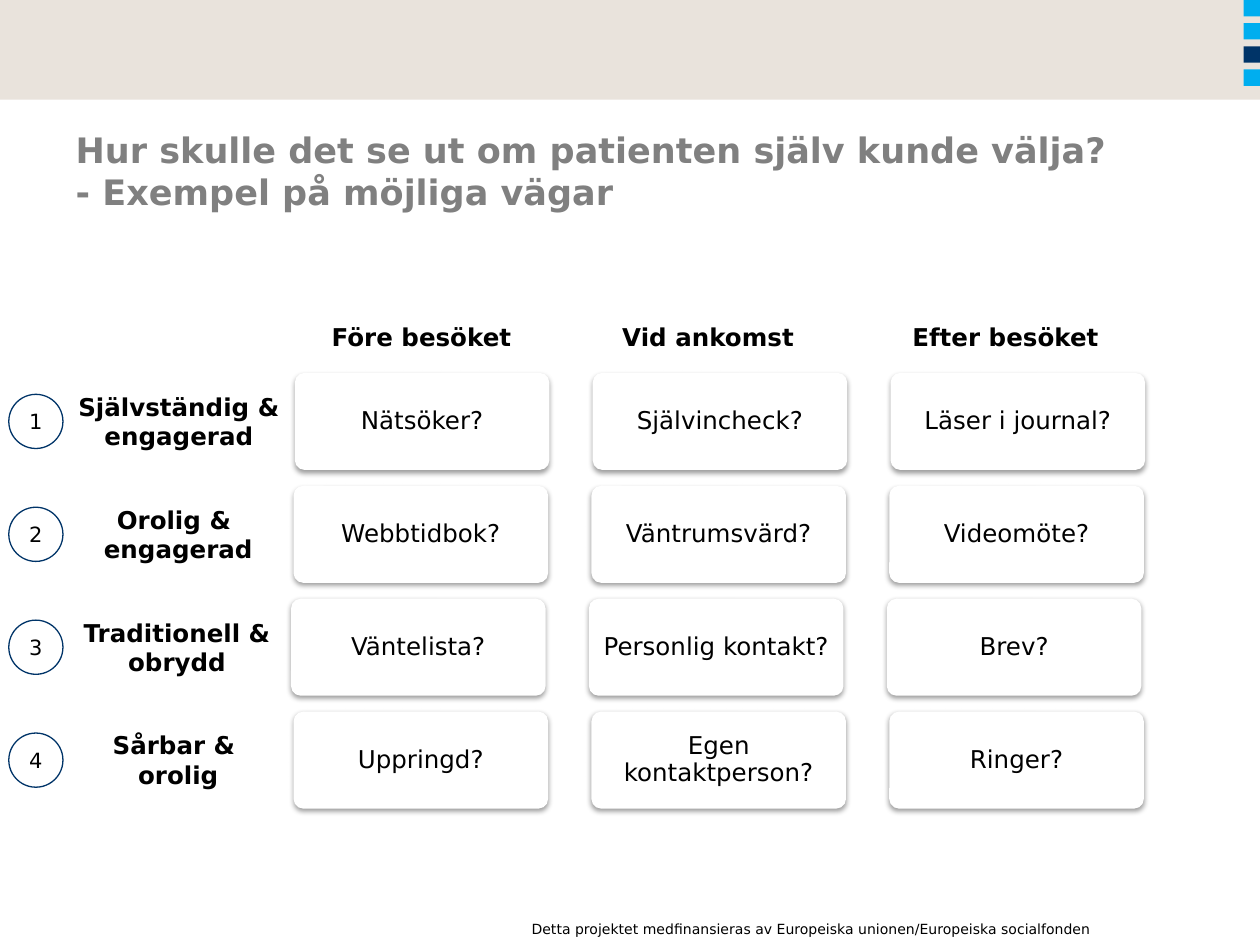
from dataclasses import dataclass

from lxml import etree
from pptx import Presentation
from pptx.dml.color import RGBColor
from pptx.enum.shapes import MSO_SHAPE
from pptx.enum.text import MSO_ANCHOR, MSO_AUTO_SIZE, PP_ALIGN
from pptx.oxml.ns import qn
from pptx.util import Inches, Pt

RECT, CARD, CIRCLE = (MSO_SHAPE.RECTANGLE, MSO_SHAPE.ROUNDED_RECTANGLE,
                      MSO_SHAPE.FLOWCHART_CONNECTOR)
LEFT, CENTER, RIGHT = PP_ALIGN.LEFT, PP_ALIGN.CENTER, PP_ALIGN.RIGHT
TOP, MIDDLE = MSO_ANCHOR.TOP, MSO_ANCHOR.MIDDLE

SLIDE_W, SLIDE_H = Inches(10), Inches(7.5)
COLS, ROWS = 100, 75
TITLE_ONLY = 5


@dataclass(frozen=True)
class Theme:
    font: str = "DejaVu Sans"
    text: str = "000000"
    title: str = "808080"
    paper: str = "FFFFFF"
    band: str = "E9E3DC"
    sky: str = "00AEEF"
    navy: str = "003468"
    title_size: int = 20
    body_size: int = 14
    number_size: int = 12
    footer_size: int = 8


class Board:
    """Draws on one slide; every box is (left, top, width, height) in grid units."""

    def __init__(self, prs, theme):
        self.theme = theme
        self.s = prs.slides.add_slide(prs.slide_layouts[TITLE_ONLY])

    def place(self, box):
        left, top, width, height = box
        return (int(SLIDE_W * left / COLS), int(SLIDE_H * top / ROWS),
                int(SLIDE_W * width / COLS), int(SLIDE_H * height / ROWS))

    def set_text(self, sp, text, size, color=None, bold=False, align=CENTER,
                 anchor=MIDDLE, inset=0.05, wrap=True):
        tf = sp.text_frame
        tf.text = text
        tf.word_wrap = wrap
        tf.auto_size = MSO_AUTO_SIZE.NONE
        tf.vertical_anchor = anchor
        tf.margin_left = tf.margin_right = Inches(inset)
        tf.margin_top = tf.margin_bottom = Inches(0.05)
        for p in tf.paragraphs:
            p.alignment = align
            p.font.name = self.theme.font
            p.font.size = Pt(size)
            p.font.bold = bold
            p.font.color.rgb = RGBColor.from_string(color or self.theme.text)

    def title(self, box, text):
        sp = self.s.shapes.title
        sp.left, sp.top, sp.width, sp.height = self.place(box)
        self.set_text(sp, text, self.theme.title_size, self.theme.title, bold=True,
                      align=LEFT, anchor=TOP, inset=0.1)

    def shape(self, kind, box, fill=None, line=None):
        sp = self.s.shapes.add_shape(kind, *self.place(box))
        sp.shadow.inherit = False
        if fill:
            sp.fill.solid()
            sp.fill.fore_color.rgb = RGBColor.from_string(fill)
        else:
            sp.fill.background()
        if line:
            sp.line.color.rgb = RGBColor.from_string(line)
            sp.line.width = Pt(0.75)
        else:
            sp.line.fill.background()
        return sp

    def label(self, box, text):
        sp = self.s.shapes.add_textbox(*self.place(box))
        self.set_text(sp, text, self.theme.body_size, bold=True, anchor=TOP)

    def footer(self, box, text):
        sp = self.s.shapes.add_textbox(*self.place(box))
        self.set_text(sp, text, self.theme.footer_size, align=RIGHT, anchor=TOP,
                      inset=0.1)

    def card(self, box, text):
        sp = self.shape(CARD, box, fill=self.theme.paper)
        sp.adjustments[0] = 0.1
        self.drop_shadow(sp)
        self.set_text(sp, text, self.theme.body_size, inset=0.08)
        for p in sp.text_frame.paragraphs:
            p.line_spacing = 0.9

    def drop_shadow(self, sp):
        effects = sp.element.spPr.find(qn("a:effectLst"))
        shadow = etree.SubElement(effects, qn("a:outerShdw"), blurRad=str(Pt(3.1)),
                                  dist=str(Pt(1.6)), dir="5400000", rotWithShape="0")
        color = etree.SubElement(shadow, qn("a:srgbClr"), val=self.theme.text)
        etree.SubElement(color, qn("a:alpha"), val="38000")

    def number(self, box, value):
        sp = self.shape(CIRCLE, box, line=self.theme.navy)
        self.set_text(sp, str(value), self.theme.number_size, wrap=False)


HEADERS = [("Före besöket", 25.5, 15.9), ("Vid ankomst", 48, 16.4),
           ("Efter besöket", 70.9, 17.8)]

# Label, left edge of the first card, one card per visit phase
PATHS = [
    ("Självständig & engagerad", 23.4, ["Nätsöker?", "Självincheck?", "Läser i journal?"]),
    ("Orolig & \vengagerad", 23.3, ["Webbtidbok?", "Väntrumsvärd?", "Videomöte?"]),
    ("Traditionell & obrydd", 23.1, ["Väntelista?", "Personlig kontakt?", "Brev?"]),
    ("Sårbar & \norolig", 23.3, ["Uppringd?", "Egen kontaktperson?", "Ringer?"]),
]
FIRST_ROW, ROW_STEP, COL_STEP = 29.6, 8.96, 23.64
CARD_W, CARD_H = 20.2, 7.7
LABEL_LEFT, LABEL_H = 5, 5.7
CIRCLE_LEFT, CIRCLE_D = 0.7, 4.3


def main():
    prs = Presentation()
    prs.slide_width, prs.slide_height = SLIDE_W, SLIDE_H
    theme = Theme()
    board = Board(prs, theme)

    board.shape(RECT, (0, 0, COLS, 7.9), fill=theme.band)
    for i, color in enumerate([theme.sky, theme.sky, theme.navy, theme.sky]):
        board.shape(RECT, (98.7, i * 1.84, 1.3, 1.3), fill=color)
    board.footer((40.1, 72.6, 47.5, 2.4),
                 "Detta projektet medfinansieras av Europeiska unionen/Europeiska socialfonden")
    board.title((5, 9.7, 90, 12.5),
                "Hur skulle det se ut om patienten själv kunde välja?\v"
                "- Exempel på möjliga vägar")

    for text, left, width in HEADERS:
        board.label((left, 25.1, width, 3.4), text)

    for row, (name, left, steps) in enumerate(PATHS):
        top = FIRST_ROW + row * ROW_STEP
        middle = top + CARD_H / 2
        for col, step in enumerate(steps):
            board.card((left + col * COL_STEP, top, CARD_W, CARD_H), step)
        board.label((LABEL_LEFT, middle - LABEL_H / 2, left - LABEL_LEFT, LABEL_H), name)
        board.number((CIRCLE_LEFT, middle - CIRCLE_D / 2, CIRCLE_D, CIRCLE_D), row + 1)

    prs.save("out.pptx")


if __name__ == "__main__":
    main()
